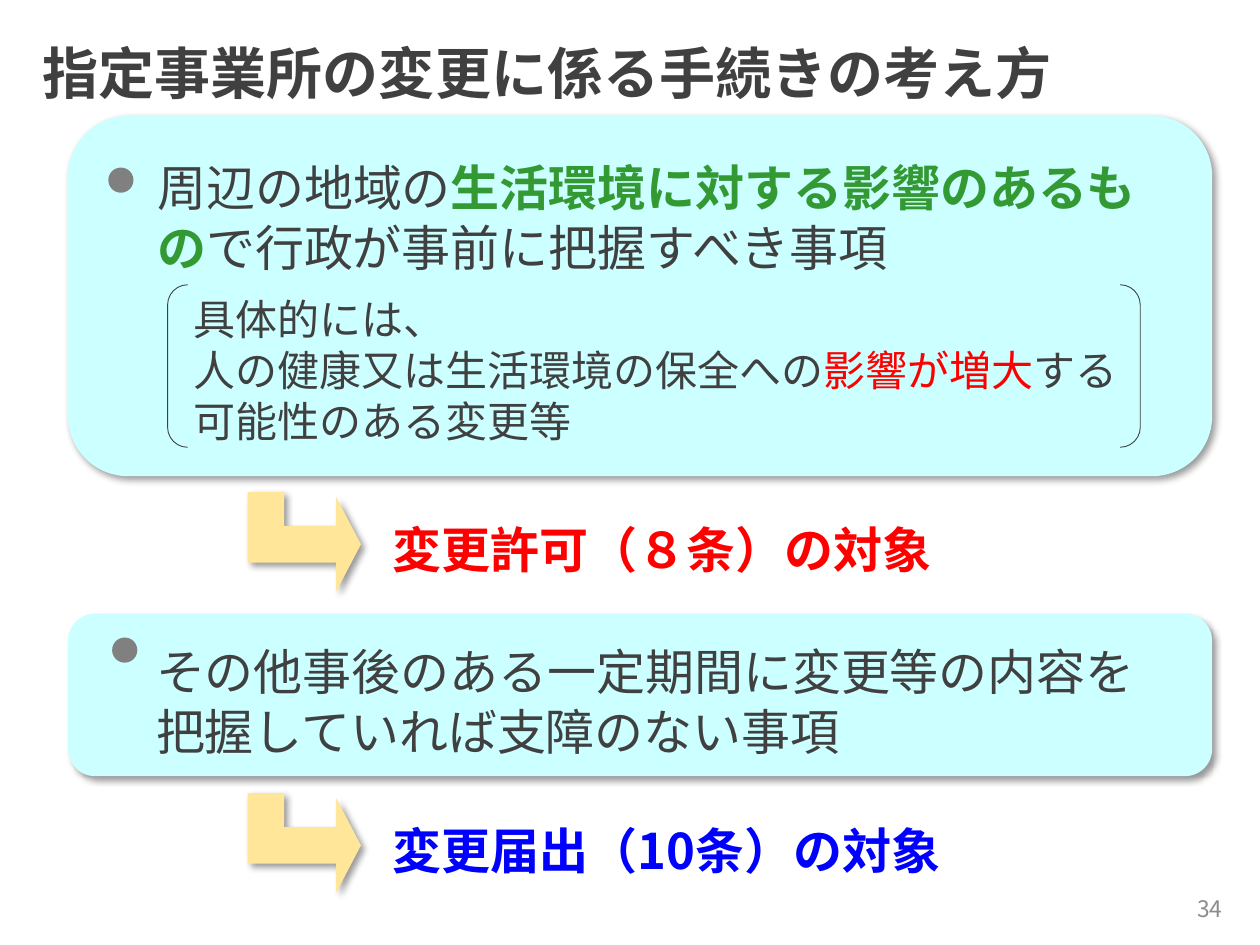
from pptx import Presentation
from pptx.dml.color import RGBColor
from pptx.enum import shapes, text
from pptx.oxml import parse_xml
from pptx.oxml.ns import nsdecls, qn
from pptx.util import Inches, Pt

FONT = "Noto Sans CJK JP"
GRAY = RGBColor(0x40, 0x40, 0x40)
BULLET = RGBColor(0x80, 0x80, 0x80)
PAGE = RGBColor(0x8C, 0x8C, 0x8C)
GREEN = RGBColor(0x33, 0x99, 0x33)
RED = RGBColor(0xFF, 0, 0)
BLUE = RGBColor(0, 0, 0xFF)
PANEL = RGBColor(0xCC, 0xFF, 0xFF)
ARROW = RGBColor(0xFF, 0xE6, 0x99)
LINE_PITCH = 1.21

# Content: each paragraph is a list of (text, colour, bold)
TITLE = [[("指定事業所の変更に係る手続きの考え方", GRAY, True)]]
DETAIL = [
    [("具体的には、", GRAY, False)],
    [("人の健康又は生活環境の保全への", GRAY, False),
     ("影響が増大", RED, False),
     ("する可能性のある変更等", GRAY, False)],
]
CASES = [
    {"panel": (0.54, 0.92, 9.08, 2.86), "dot": (0.86, 1.33),
     "box": (1.15, 1.2, 8.21, 1.04), "arrow_top": 3.85,
     "text": [[("周辺の地域の", GRAY, False),
               ("生活環境に対する影響のあるもの", GREEN, True),
               ("で行政が事前に把握すべき事項", GRAY, False)]],
     "result": [[("変更許可（８条）の対象", RED, True)]]},
    {"panel": (0.54, 4.87, 9.08, 1.29), "dot": (0.89, 5.06),
     "box": (1.14, 5.04, 8.16, 1.04), "arrow_top": 6.24,
     "text": [[("その他事後のある一定期間に変更等の内容を"
                "把握していれば支障のない事項", GRAY, False)]],
     "result": [[("変更届出（10条）の対象", BLUE, True)]]},
]

prs = Presentation()
prs.slide_width, prs.slide_height = Inches(10), Inches(7.5)
s = prs.slides.add_slide(prs.slide_layouts[5])


def write(tf, paragraphs, size, align=text.PP_ALIGN.LEFT):
    tf.word_wrap = True
    tf.auto_size = text.MSO_AUTO_SIZE.NONE
    for i, parts in enumerate(paragraphs):
        p = tf.add_paragraph() if i else tf.paragraphs[0]
        p.alignment = align
        p.space_before = Pt(0)
        p.line_spacing = Pt(round(size * LINE_PITCH, 1))
        for words, color, bold in parts:
            r = p.add_run()
            r.text = words
            r.font.size, r.font.bold, r.font.name = Pt(size), bold, FONT
            r.font.color.rgb = color
            ea = r._r.get_or_add_rPr().makeelement(qn("a:ea"), {"typeface": FONT})
            r._r.rPr.find(qn("a:latin")).addnext(ea)


def add_text(box, paragraphs, size, **options):
    tf = s.shapes.add_textbox(*map(Inches, box)).text_frame
    write(tf, paragraphs, size, **options)
    return tf


def add_shape(kind, box, fill=None, shadow=False):
    sp = s.shapes.add_shape(kind, *map(Inches, box))
    sp.shadow.inherit = False
    if fill is None:
        sp.fill.background()
    else:
        sp.fill.solid()
        sp.fill.fore_color.rgb = fill
        sp.line.fill.background()
    if shadow:
        effects = sp._element.spPr.find(qn("a:effectLst"))
        effects.append(parse_xml(
            f'<a:outerShdw {nsdecls("a")} blurRad="{Pt(4)}" dist="{Pt(3)}" '
            'dir="2700000" algn="tl" rotWithShape="0"><a:srgbClr val="000000">'
            '<a:alpha val="40000"/></a:srgbClr></a:outerShdw>'))
    return sp


# Title
title = s.shapes.title
title.left, title.top, title.width, title.height = map(
    Inches, (0.24, 0.25, 8.72, 0.62))
title.text_frame.vertical_anchor = text.MSO_ANCHOR.TOP
write(title.text_frame, TITLE, 32)

# Each case: panel, bullet, statement, arrow and resulting procedure
for case in CASES:
    add_shape(shapes.MSO_SHAPE.ROUNDED_RECTANGLE, case["panel"], PANEL, True)
    add_shape(shapes.MSO_SHAPE.OVAL, (*case["dot"], 0.2, 0.2), BULLET)
    add_text(case["box"], case["text"], 28)
    top = case["arrow_top"]
    arrow = add_shape(shapes.MSO_SHAPE.BENT_UP_ARROW,
                      (2.02, top, 0.79, 0.9), ARROW, True)
    arrow.rotation = 90
    for i, value in enumerate((0.368, 0.475, 0.25)):
        arrow.adjustments[i] = value
    add_text((3.02, top + 0.22, 5.21, 0.57), case["result"], 28)

# Bracketed detail of the first case
bracket = add_shape(shapes.MSO_SHAPE.DOUBLE_BRACKET, (1.33, 2.26, 7.72, 1.29))
bracket.adjustments[0] = 0.124
bracket.line.color.rgb = GRAY
bracket.line.width = Pt(0.5)
add_text((1.44, 2.28, 7.82, 1.31), DETAIL, 24)

# Page number
page = add_text((7.55, 7.01, 2.25, 0.4), [[("34", PAGE, False)]], 13,
                align=text.PP_ALIGN.RIGHT)
page.vertical_anchor = text.MSO_ANCHOR.MIDDLE

prs.save("out.pptx")
